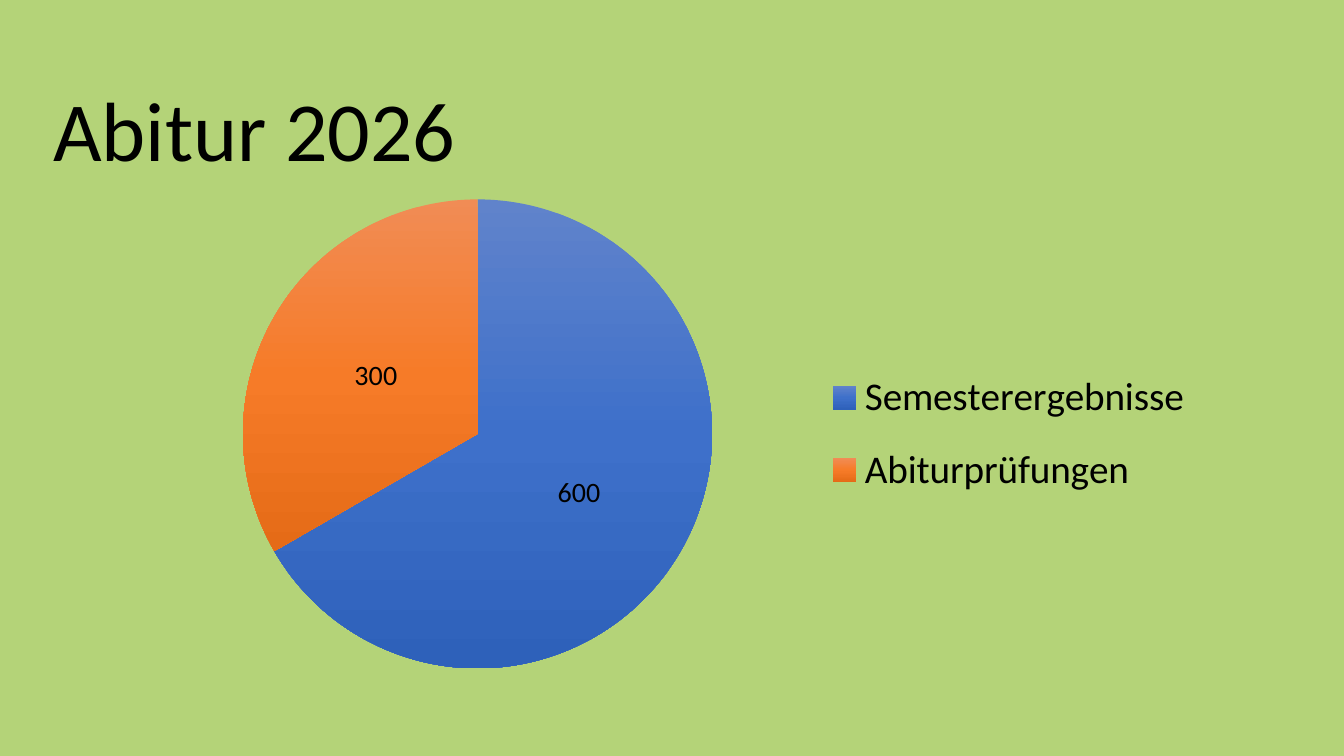
"""Build a slide with a pie chart of the Abitur 2026 points."""
from lxml import etree
from pptx import Presentation
from pptx.chart.data import CategoryChartData
from pptx.dml.color import RGBColor
from pptx.enum.chart import XL_CHART_TYPE, XL_LABEL_POSITION, XL_LEGEND_POSITION
from pptx.enum.text import MSO_ANCHOR, MSO_AUTO_SIZE, PP_ALIGN
from pptx.oxml import parse_xml
from pptx.oxml.ns import nsdecls, qn
from pptx.util import Inches, Pt

PIE = XL_CHART_TYPE.PIE
LABEL_CENTER = XL_LABEL_POSITION.CENTER
LEGEND_RIGHT = XL_LEGEND_POSITION.RIGHT

TITLE = "Abitur 2026"
POINTS = {"Semesterergebnisse": 600, "Abiturprüfungen": 300}
COLORS = {"background": "B4D378", "text": "000000"}
GRADIENTS = [("6083CB", "3E70CA", "2E61BA"), ("F18C55", "F67B28", "E56B17")]
FONT = "Calibri"
TITLE_BOX = (0.31, 0.78, 4.43, 1.05)
CHART_BOX = (1.04, 1.83, 11.2, 4.95)
PIE_LAYOUT = {"x": 0.12, "y": 0.03, "w": 0.42, "h": 0.94}
LEGEND_LAYOUT = {"x": 0.63, "y": 0.33, "w": 0.34, "h": 0.34}


def format_font(font, size):
    values = {"name": FONT, "size": Pt(size), "bold": False}
    for name, value in values.items():
        setattr(font, name, value)
    font.color.rgb = RGBColor.from_string(COLORS["text"])


def layout_element(fractions, inner=False):
    layout = parse_xml(f"<c:layout {nsdecls('c')}><c:manualLayout/></c:layout>")
    settings = {"layoutTarget": "inner"} if inner else {}
    settings.update(xMode="edge", yMode="edge", **fractions)
    for name, value in settings.items():
        etree.SubElement(layout[0], qn(f"c:{name}")).set("val", str(value))
    return layout


def gradient_element(colors):
    stops = "".join(
        f'<a:gs pos="{index * 50000}"><a:srgbClr val="{color}"/></a:gs>'
        for index, color in enumerate(colors)
    )
    return parse_xml(
        f'<a:gradFill {nsdecls("a")} rotWithShape="1"><a:gsLst>{stops}</a:gsLst>'
        '<a:lin ang="5400000" scaled="0"/></a:gradFill>'
    )


def add_title(slide):
    title = slide.shapes.title
    title.left, title.top, title.width, title.height = map(Inches, TITLE_BOX)
    frame = title.text_frame
    frame.text = TITLE
    frame.word_wrap = True
    frame.auto_size = MSO_AUTO_SIZE.NONE
    frame.vertical_anchor = MSO_ANCHOR.BOTTOM
    paragraph = frame.paragraphs[0]
    paragraph.alignment = PP_ALIGN.CENTER
    paragraph.line_spacing = 0.9
    format_font(paragraph.runs[0].font, 60)


def add_pie(slide):
    data = CategoryChartData()
    data.categories = list(POINTS)
    data.add_series("Series 1", list(POINTS.values()))
    chart = slide.shapes.add_chart(PIE, *map(Inches, CHART_BOX), data).chart
    chart.has_title = False
    format_font(chart.font, 10)

    chart.has_legend = True
    legend = chart.legend
    legend.position = LEGEND_RIGHT
    legend.include_in_layout = False
    format_font(legend.font, 28)
    for old_layout in legend._element.findall(qn("c:layout")):
        legend._element.remove(old_layout)
    legend._element.find(qn("c:legendPos")).addnext(layout_element(LEGEND_LAYOUT))

    plot_area = chart._chartSpace.chart.plotArea
    for old_layout in plot_area.findall(qn("c:layout")):
        plot_area.remove(old_layout)
    plot_area.insert(0, layout_element(PIE_LAYOUT, inner=True))

    plot = chart.plots[0]
    plot.vary_by_categories = True
    series = plot.series[0]
    labels = series.data_labels
    labels.show_value = True
    labels.position = LABEL_CENTER
    format_font(labels.font, 20)
    for index, colors in enumerate(GRADIENTS):
        point_format = series.points[index].format
        point_format.line.fill.background()
        properties = series.points[index]._element.findall(qn("c:dPt"))[index].spPr
        properties.insert(0, gradient_element(colors))


def main():
    presentation = Presentation()
    presentation.slide_width = Inches(13.33)
    presentation.slide_height = Inches(7.5)
    slide = presentation.slides.add_slide(presentation.slide_layouts[5])
    fill = slide.background.fill
    fill.solid()
    fill.fore_color.rgb = RGBColor.from_string(COLORS["background"])
    add_title(slide)
    add_pie(slide)
    presentation.save("out.pptx")


if __name__ == "__main__":
    main()
